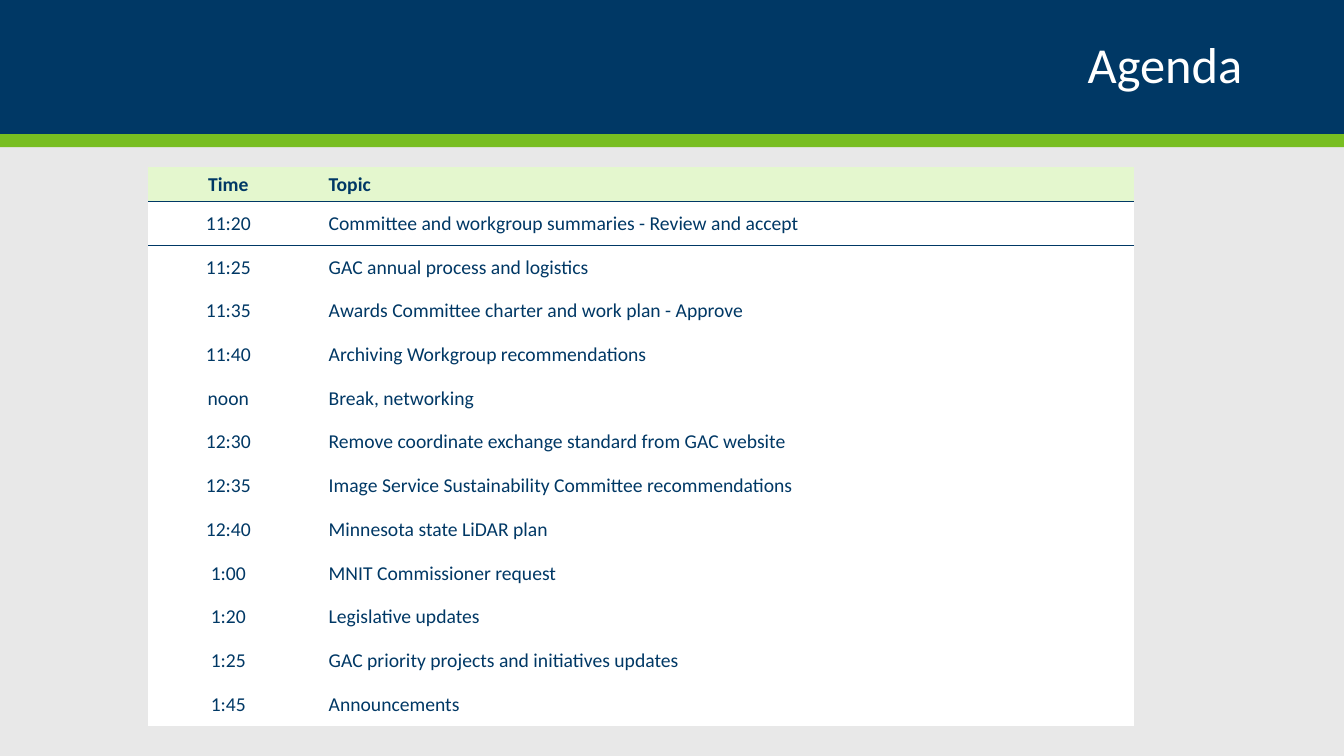
from lxml import etree
from pptx import Presentation
from pptx.dml.color import RGBColor
from pptx.enum.shapes import MSO_SHAPE
from pptx.enum.text import MSO_ANCHOR, PP_ALIGN
from pptx.oxml.ns import qn
from pptx.util import Inches, Pt

RECTANGLE = MSO_SHAPE.RECTANGLE
MIDDLE = MSO_ANCHOR.MIDDLE
LEFT, CENTER, RIGHT = PP_ALIGN.LEFT, PP_ALIGN.CENTER, PP_ALIGN.RIGHT

TITLE = "Agenda"
AGENDA = [
    ("Time", "Topic"),
    ("11:20", "Committee and workgroup summaries - Review and accept"),
    ("11:25", "GAC annual process and logistics"),
    ("11:35", "Awards Committee charter and work plan - Approve"),
    ("11:40", "Archiving Workgroup recommendations"),
    ("noon", "Break, networking"),
    ("12:30", "Remove coordinate exchange standard from GAC website"),
    ("12:35", "Image Service Sustainability Committee recommendations"),
    ("12:40", "Minnesota state LiDAR plan"),
    ("1:00", "MNIT Commissioner request"),
    ("1:20", "Legislative updates"),
    ("1:25", "GAC priority projects and initiatives updates"),
    ("1:45", "Announcements"),
]

NAVY = RGBColor(0x00, 0x38, 0x65)
GREEN = RGBColor(0x78, 0xBE, 0x21)
PALE_GREEN = RGBColor(0xE4, 0xF7, 0xCE)
GRAY = RGBColor(0xE8, 0xE8, 0xE8)
WHITE = RGBColor(0xFF, 0xFF, 0xFF)
FONT = "Calibri"
PLAIN_TABLE_STYLE = "{2D5ABB26-0587-4C30-8999-92F81FD0307C}"

SLIDE_WIDTH, SLIDE_HEIGHT = 13.33, 7.5
BANDS = [(0, 1.33, NAVY), (1.33, 0.13, GREEN)]  # top, height, colour
TABLE_LEFT, TABLE_TOP = 1.47, 1.66
COLUMNS = [(1.59, CENTER, 0.1), (8.19, LEFT, 0.2)]  # width, alignment, left margin
HEADER_HEIGHT, ROW_HEIGHT = 0.34, 0.43


def style_paragraph(para, size, color, alignment, bold=False):
    para.alignment = alignment
    para.font.name = FONT
    para.font.size = Pt(size)
    para.font.bold = bold
    para.font.color.rgb = color


def add_band(page, top, height, color):
    band = page.shapes.add_shape(
        RECTANGLE, 0, Inches(top), Inches(SLIDE_WIDTH), Inches(height))
    band.shadow.inherit = False
    band.fill.solid()
    band.fill.fore_color.rgb = color
    band.line.fill.background()


def add_title(page):
    box = page.shapes.add_textbox(Inches(0.92), Inches(0.17), Inches(11.5), Inches(1))
    frame = box.text_frame
    frame.word_wrap = True
    frame.vertical_anchor = MIDDLE
    para = frame.paragraphs[0]
    para.text = TITLE
    para.line_spacing = 0.9
    style_paragraph(para, 36, WHITE, RIGHT)


def set_border(cell, side, color):
    """Draw a 1 pt line on one side; borders come before the fill in the XML."""
    properties = cell._tc.get_or_add_tcPr()
    line = etree.Element(qn(f"a:ln{side}"), w=str(Pt(1)))
    fill = etree.SubElement(line, qn("a:solidFill"))
    etree.SubElement(fill, qn("a:srgbClr"), val=str(color))
    properties.insert(0, line)


def add_agenda(page):
    width = sum(column[0] for column in COLUMNS)
    height = HEADER_HEIGHT + ROW_HEIGHT * (len(AGENDA) - 1)
    frame = page.shapes.add_table(
        len(AGENDA), len(COLUMNS), Inches(TABLE_LEFT), Inches(TABLE_TOP),
        Inches(width), Inches(height))
    table = frame.table
    table.horz_banding = False
    table._tbl.tblPr.find(qn("a:tableStyleId")).text = PLAIN_TABLE_STYLE
    for column, (column_width, _, _) in zip(table.columns, COLUMNS):
        column.width = Inches(column_width)

    for row_index, entry in enumerate(AGENDA):
        header = row_index == 0
        table.rows[row_index].height = Inches(HEADER_HEIGHT if header else ROW_HEIGHT)
        for column_index, (_, alignment, margin) in enumerate(COLUMNS):
            cell = table.cell(row_index, column_index)
            cell.text = entry[column_index]
            cell.vertical_anchor = MIDDLE
            cell.margin_left, cell.margin_right = Inches(margin), Inches(0.1)
            cell.margin_top = cell.margin_bottom = Inches(0.05 if header else 0.1)
            cell.fill.solid()
            cell.fill.fore_color.rgb = PALE_GREEN if header else WHITE
            style_paragraph(cell.text_frame.paragraphs[0], 14, NAVY, alignment, header)
            if row_index < 2:
                set_border(cell, "B" if header else "T", NAVY)


def main():
    deck = Presentation()
    deck.slide_width, deck.slide_height = Inches(SLIDE_WIDTH), Inches(SLIDE_HEIGHT)
    page = deck.slides.add_slide(deck.slide_layouts[6])
    page.background.fill.solid()
    page.background.fill.fore_color.rgb = GRAY
    for band in BANDS:
        add_band(page, *band)
    add_title(page)
    add_agenda(page)
    deck.save("out.pptx")


if __name__ == "__main__":
    main()
